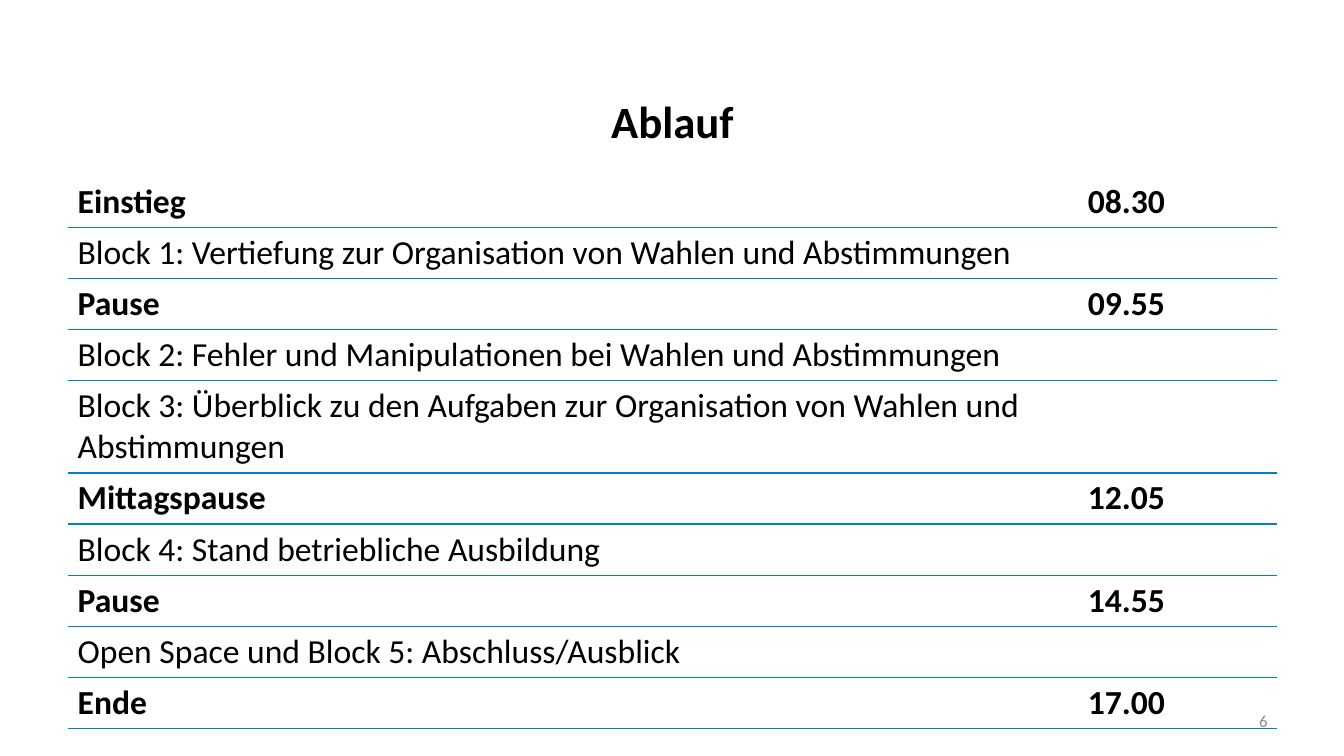
"""Build the agenda slide with a timetable of blocks and breaks."""
import dataclasses

import lxml.etree
import pptx
import pptx.dml.color
import pptx.enum.text
import pptx.oxml.ns
import pptx.slide
import pptx.table
import pptx.text.text
import pptx.util

Inches = pptx.util.Inches
Align = pptx.enum.text.PP_ALIGN
Anchor = pptx.enum.text.MSO_ANCHOR
BLACK = pptx.dml.color.RGBColor(0x00, 0x00, 0x00)
GREY = pptx.dml.color.RGBColor(0x8C, 0x8C, 0x8C)
BLUE = pptx.dml.color.RGBColor(0x00, 0x82, 0xCA)
FONT = "Calibri"
LEFT, WIDTH = 0.67, 12
ROW_HEIGHT = 0.44
COLUMN_WIDTHS = (10.02, 1.98)


@dataclasses.dataclass(frozen=True)
class AgendaItem:
    title: str
    time: str = ""


@dataclasses.dataclass(frozen=True)
class Label:
    text: str
    left: float
    top: float
    width: float
    height: float
    size: int
    color: pptx.dml.color.RGBColor
    align: Align
    bold: bool = False


AGENDA = (
    AgendaItem("Einstieg", "08.30"),
    AgendaItem("Block 1: Vertiefung zur Organisation von Wahlen und Abstimmungen"),
    AgendaItem("Pause", "09.55"),
    AgendaItem("Block 2: Fehler und Manipulationen bei Wahlen und Abstimmungen"),
    AgendaItem("Block 3: Überblick zu den Aufgaben zur Organisation von Wahlen und Abstimmungen"),
    AgendaItem("Mittagspause", "12.05"),
    AgendaItem("Block 4: Stand betriebliche Ausbildung"),
    AgendaItem("Pause", "14.55"),
    AgendaItem("Open Space und Block 5: Abschluss/Ausblick"),
    AgendaItem("Ende", "17.00"),
)
LABELS = (
    Label("Ablauf", LEFT, 0.84, WIDTH, 0.71, 32, BLACK, Align.CENTER, True),
    Label("6", 9.56, 6.95, 3.11, 0.4, 12, GREY, Align.RIGHT),
)


def style_paragraph(
    p: pptx.text.text._Paragraph, size: int, color: pptx.dml.color.RGBColor, bold: bool
) -> None:
    p.font.name = FONT
    p.font.size = pptx.util.Pt(size)
    p.font.bold = bold
    p.font.color.rgb = color


def set_borders(cell: pptx.table._Cell, ruled_sides: str) -> None:
    qn = pptx.oxml.ns.qn
    tc_pr = cell._tc.get_or_add_tcPr()
    for i, side in enumerate("LRTB"):
        ln = lxml.etree.Element(qn(f"a:ln{side}"), w=str(pptx.util.Pt(1)))
        if side in ruled_sides:
            fill = lxml.etree.SubElement(ln, qn("a:solidFill"))
            lxml.etree.SubElement(fill, qn("a:srgbClr"), val=str(BLUE))
        else:
            lxml.etree.SubElement(ln, qn("a:noFill"))
        tc_pr.insert(i, ln)


def add_agenda(s: pptx.slide.Slide, items: tuple[AgendaItem, ...]) -> None:
    table = s.shapes.add_table(
        len(items), len(COLUMN_WIDTHS), Inches(LEFT), Inches(1.75),
        Inches(WIDTH), Inches(ROW_HEIGHT * len(items)),
    ).table
    table.first_row = False
    table.horz_banding = False
    for column, width in zip(table.columns, COLUMN_WIDTHS):
        column.width = Inches(width)
    for i, item in enumerate(items):
        table.rows[i].height = Inches(ROW_HEIGHT)
        for j, text in enumerate((item.title, item.time)):
            cell = table.cell(i, j)
            cell.text = text
            cell.fill.background()
            style_paragraph(cell.text_frame.paragraphs[0], 24, BLACK, bool(item.time))
            set_borders(cell, "TB" if i else "B")


def add_label(s: pptx.slide.Slide, label: Label) -> None:
    box = s.shapes.add_textbox(
        Inches(label.left), Inches(label.top), Inches(label.width), Inches(label.height)
    )
    tf = box.text_frame
    tf.word_wrap = True
    tf.vertical_anchor = Anchor.MIDDLE
    p = tf.paragraphs[0]
    p.text = label.text
    p.alignment = label.align
    style_paragraph(p, label.size, label.color, label.bold)


def main() -> None:
    prs = pptx.Presentation()
    prs.slide_width = Inches(13.33)
    prs.slide_height = Inches(7.5)
    s = prs.slides.add_slide(prs.slide_layouts[6])
    add_agenda(s, AGENDA)
    for label in LABELS:
        add_label(s, label)
    prs.save("out.pptx")


if __name__ == "__main__":
    main()
